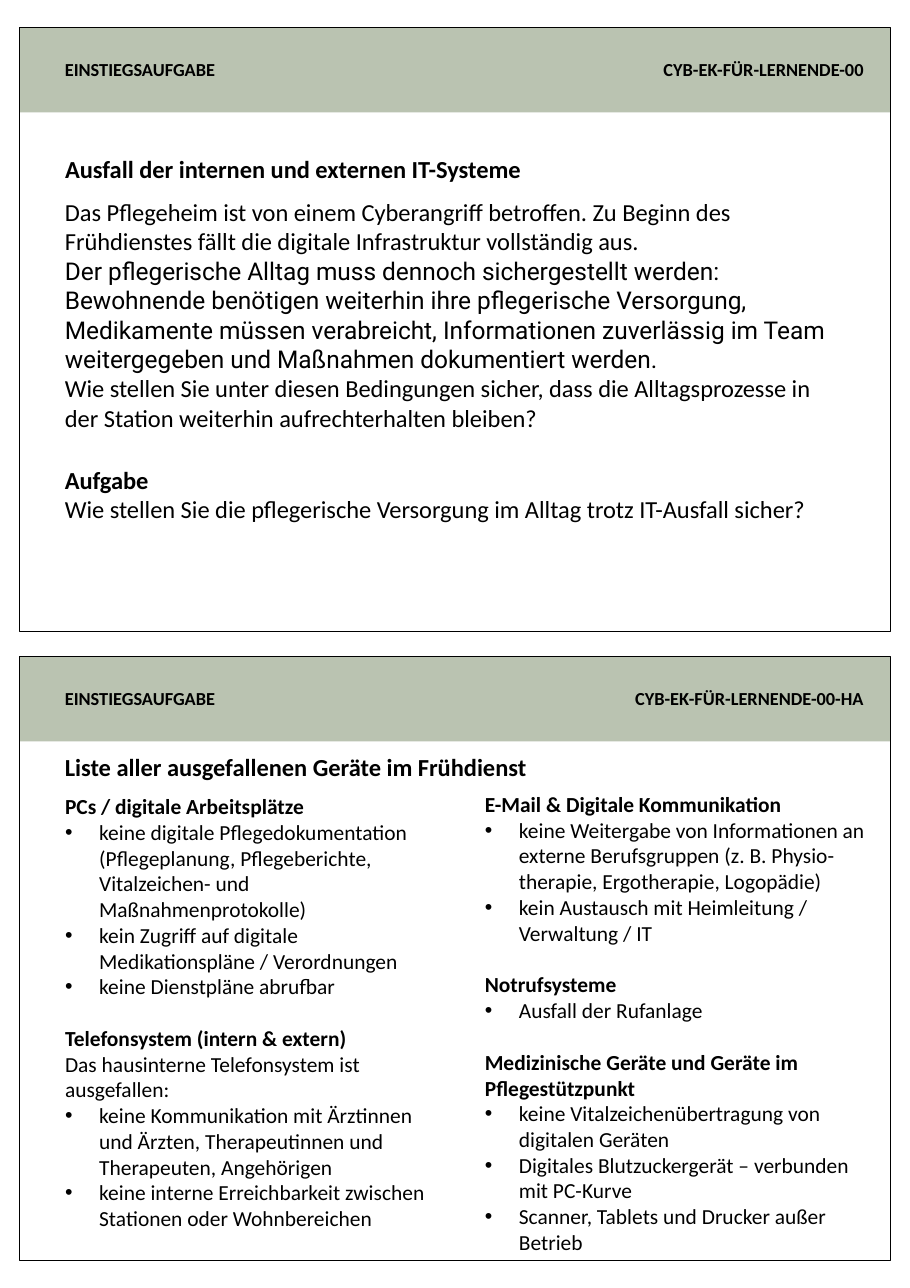
from lxml.etree import SubElement
from pptx import Presentation
from pptx.dml.color import RGBColor
from pptx.enum.shapes import MSO_SHAPE
from pptx.enum.text import MSO_ANCHOR, MSO_AUTO_SIZE, PP_ALIGN
from pptx.oxml.ns import qn
from pptx.util import Inches, Pt

COLORS = {"band": "BAC3B1", "ink": "000000"}
LEFT = 0.49

prs = Presentation()
prs.slide_width, prs.slide_height = Inches(8.26), Inches(11.69)
s = prs.slides.add_slide(prs.slide_layouts[3])


def place(sp, x, y, w, h):
    """Move a text shape and give it plain top-left text settings."""
    sp.left, sp.top, sp.width, sp.height = (Inches(v) for v in (x, y, w, h))
    tf = sp.text_frame
    tf.word_wrap = True
    tf.auto_size = MSO_AUTO_SIZE.NONE
    tf.vertical_anchor = MSO_ANCHOR.TOP
    return tf


def write(tf, lines, size, bold=False, font="Calibri", align=PP_ALIGN.LEFT):
    """Fill a text frame with one paragraph per line."""
    tf.text = "\n".join(lines)
    for p in tf.paragraphs:
        p.alignment = align
        p.space_before = Pt(0)
        for r in p.runs:
            r.font.size, r.font.bold, r.font.name = Pt(size), bold, font
            r.font.color.rgb = RGBColor.from_string(COLORS["ink"])


# Two cards: header band, frame and header texts
cards = [(0.25, "CYB-EK-FÜR-LERNENDE-00"), (5.96, "CYB-EK-FÜR-LERNENDE-00-HA")]
for top, code in cards:
    for height, filled in ((0.77, True), (5.48, False)):
        sp = s.shapes.add_shape(MSO_SHAPE.RECTANGLE, Inches(0.18), Inches(top),
                                Inches(7.9), Inches(height))
        sp.shadow.inherit = False
        if filled:
            sp.fill.solid()
            sp.fill.fore_color.rgb = RGBColor.from_string(COLORS["band"])
            sp.line.fill.background()
        else:
            sp.fill.background()
            sp.line.color.rgb = RGBColor.from_string(COLORS["ink"])
            sp.line.width = Pt(0.75)
    for x, width, text, align in ((LEFT, 3.31, "EINSTIEGSAUFGABE", PP_ALIGN.LEFT),
                                  (4.63, 3.31, code, PP_ALIGN.RIGHT)):
        tf = place(s.shapes.add_textbox(0, 0, 0, 0), x, top + 0.23, width, 0.3)
        write(tf, [text], 12, bold=True, align=align)

# Headings of the cards
tf = place(s.shapes.title, LEFT, 1.35, 6.95, 0.37)
write(tf, ["Ausfall der internen und externen IT-Systeme"], 16, bold=True)
tf = place(s.shapes.add_textbox(0, 0, 0, 0), LEFT, 6.78, 6.95, 0.37)
write(tf, ["Liste aller ausgefallenen Geräte im Frühdienst"], 16, bold=True)

# Situation, with the middle paragraph in Roboto
tf = place(s.shapes.add_textbox(0, 0, 0, 0), LEFT, 1.74, 7.25, 2.26)
write(tf, [
    "Das Pflegeheim ist von einem Cyberangriff betroffen. Zu Beginn des "
    "Frühdienstes fällt die digitale Infrastruktur vollständig aus.",
    "Der pflegerische Alltag muss dennoch sichergestellt werden: Bewohnende "
    "benötigen weiterhin ihre pflegerische Versorgung, Medikamente müssen "
    "verabreicht, Informationen zuverlässig im Team weitergegeben und "
    "Maßnahmen dokumentiert werden.",
    "Wie stellen Sie unter diesen Bedingungen sicher, dass die Alltagsprozesse "
    "in der Station weiterhin aufrechterhalten bleiben?",
], 16)
tf.paragraphs[1].runs[0].font.name = "Roboto"

# Task
tf = place(s.shapes.add_textbox(0, 0, 0, 0), LEFT, 4.17, 6.95, 1.18)
write(tf, ["Aufgabe", "Wie stellen Sie die pflegerische Versorgung im Alltag "
           "trotz IT-Ausfall sicher?"], 16)
tf.paragraphs[0].runs[0].font.bold = True

# Lists of failed devices: (kind, text)
devices_left = [
    ("head", "PCs / digitale Arbeitsplätze"),
    ("item", "keine digitale Pflegedokumentation (Pflegeplanung, Pflegeberichte, "
             "Vitalzeichen- und Maßnahmenprotokolle)"),
    ("item", "kein Zugriff auf digitale Medikationspläne / Verordnungen"),
    ("item", "keine Dienstpläne abrufbar"),
    ("head", "Telefonsystem (intern & extern)"),
    ("text", "Das hausinterne Telefonsystem ist ausgefallen:"),
    ("item", "keine Kommunikation mit Ärztinnen und Ärzten, Therapeutinnen und "
             "Therapeuten, Angehörigen"),
    ("item", "keine interne Erreichbarkeit zwischen Stationen oder Wohnbereichen"),
]
devices_right = [
    ("head", "E-Mail & Digitale Kommunikation"),
    ("item", "keine Weitergabe von Informationen an externe Berufsgruppen "
             "(z. B. Physio-therapie, Ergotherapie, Logopädie)"),
    ("item", "kein Austausch mit Heimleitung / Verwaltung / IT"),
    ("head", "Notrufsysteme"),
    ("item", "Ausfall der Rufanlage"),
    ("head", "Medizinische Geräte und Geräte im Pflegestützpunkt"),
    ("item", "keine Vitalzeichenübertragung von digitalen Geräten"),
    ("item", "Digitales Blutzuckergerät – verbunden mit PC-Kurve"),
    ("item", "Scanner, Tablets und Drucker außer Betrieb"),
]
columns = [(1, devices_left, (LEFT, 7.15, 3.64, 4.54)),
           (2, devices_right, (4.3, 7.13, 3.78, 4.54))]
for idx, devices, box in columns:
    tf = place(s.placeholders[idx], *box)
    write(tf, [text for kind, text in devices], 14)
    for i, (p, (kind, text)) in enumerate(zip(tf.paragraphs, devices)):
        pPr = p._p.get_or_add_pPr()
        indent = Inches(0.31) if kind == "item" else 0
        pPr.set("marL", str(indent))
        pPr.set("indent", str(-indent))
        if kind == "item":
            SubElement(pPr, qn("a:buFont")).set("typeface", "Arial")
            SubElement(pPr, qn("a:buChar")).set("char", "•")
        else:
            SubElement(pPr, qn("a:buNone"))
        if kind == "head":
            p.runs[0].font.bold = True
            p.space_before = Pt(17 if i else 0)

prs.save("out.pptx")
